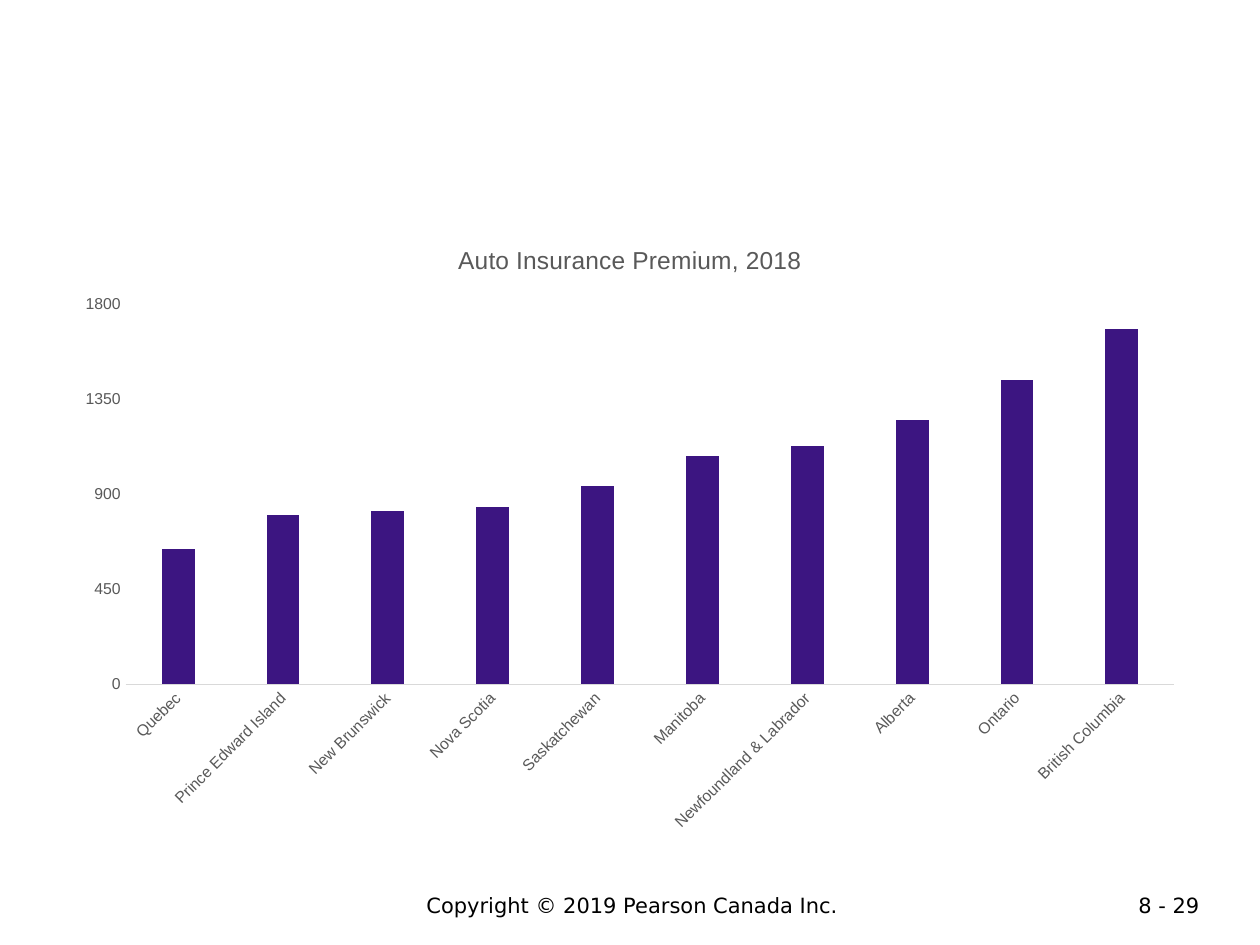
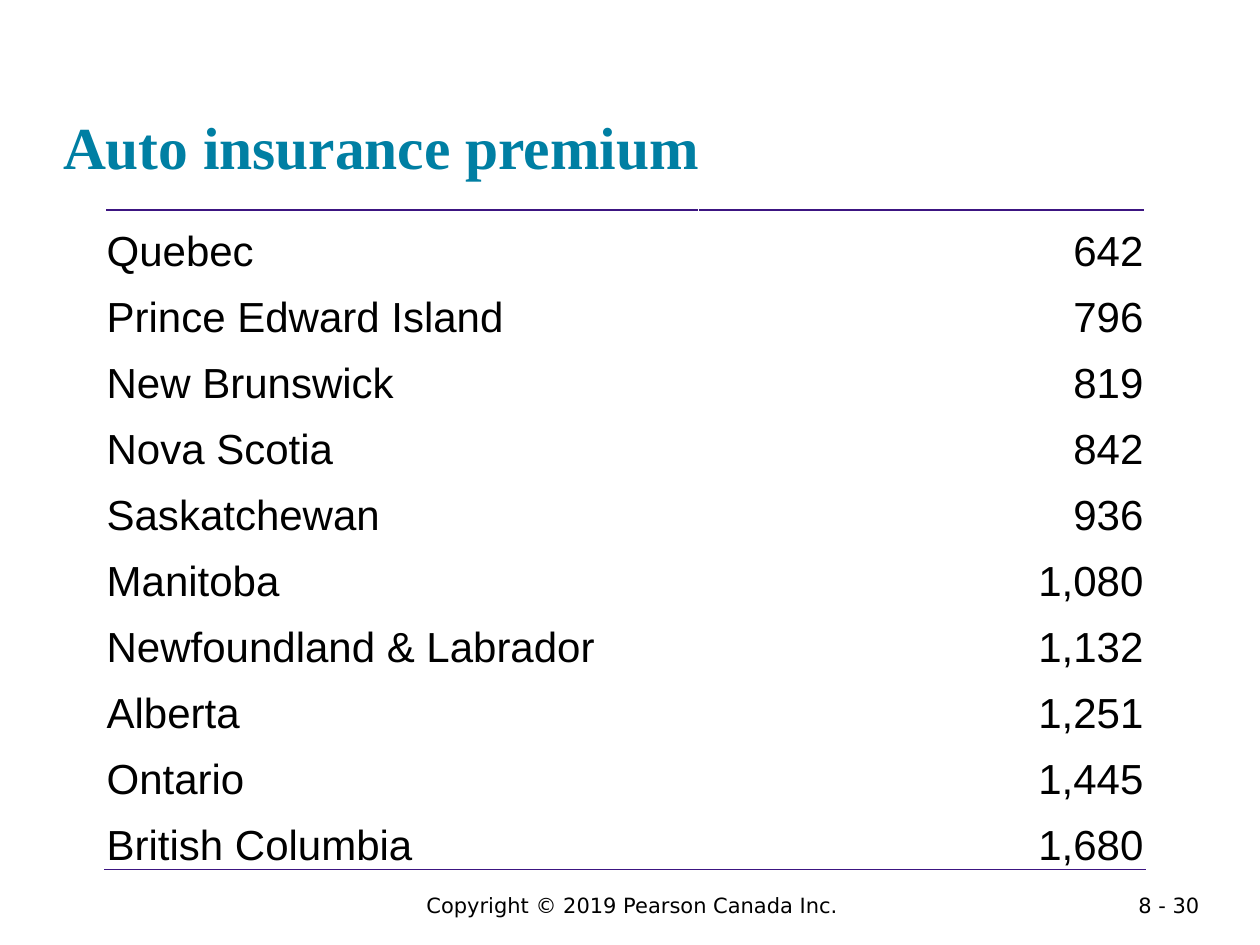
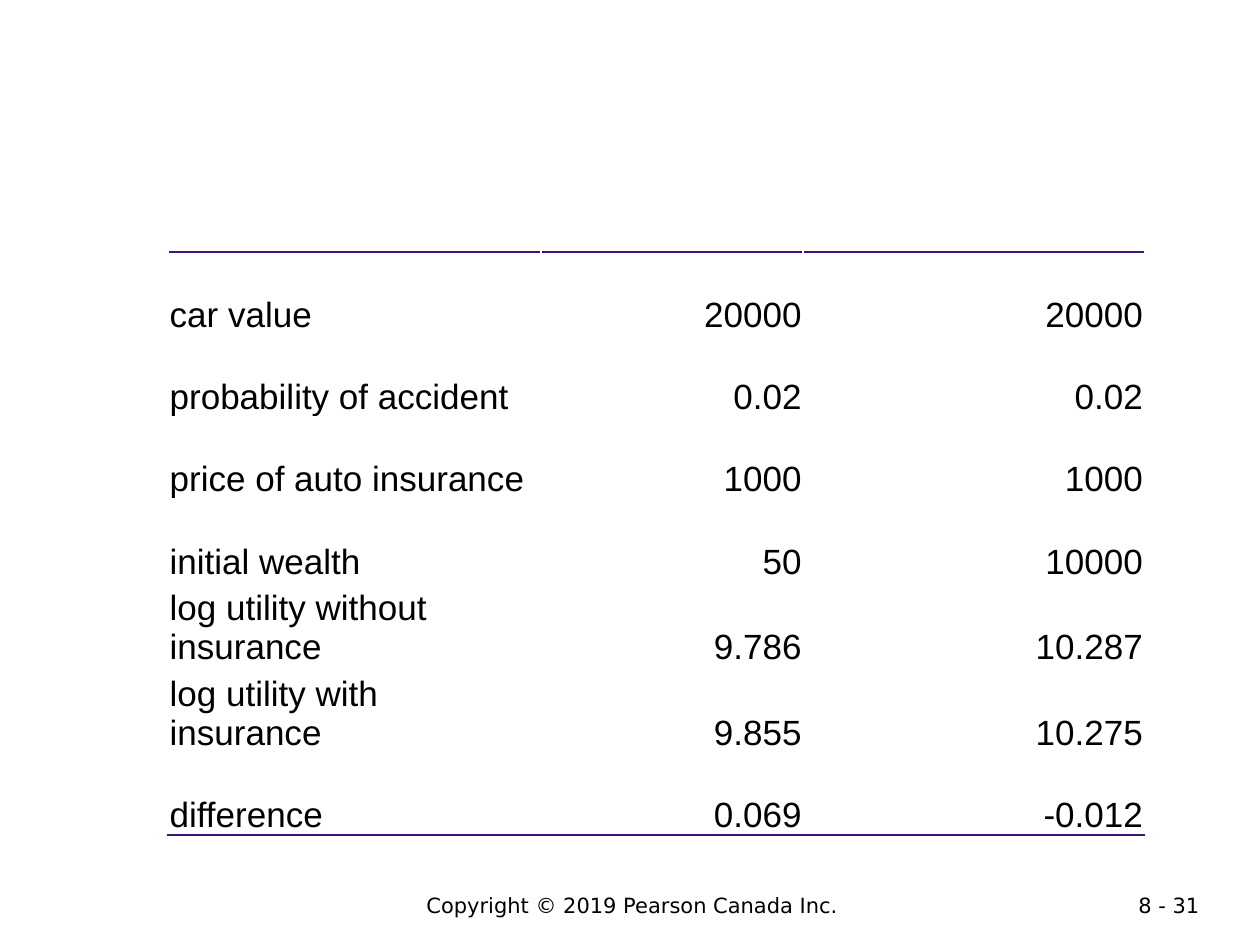
from lxml.etree import SubElement
from pptx import Presentation
from pptx.chart.data import CategoryChartData
from pptx.dml.color import RGBColor
from pptx.enum.chart import XL_CHART_TYPE, XL_TICK_MARK
from pptx.enum.text import MSO_ANCHOR, MSO_AUTO_SIZE, PP_ALIGN
from pptx.oxml import parse_xml
from pptx.oxml.ns import nsdecls, qn
from pptx.util import Cm, Pt

TITLE_ONLY, BLANK = 5, 6
CHAPTER, FIRST_PAGE = 8, 29
COPYRIGHT = "Copyright © 2019 Pearson Canada Inc."

PREMIUMS = {
    "Quebec": 642,
    "Prince Edward Island": 796,
    "New Brunswick": 819,
    "Nova Scotia": 842,
    "Saskatchewan": 936,
    "Manitoba": 1080,
    "Newfoundland & Labrador": 1132,
    "Alberta": 1251,
    "Ontario": 1445,
    "British Columbia": 1680,
}

UTILITY_ROWS = [
    ("car value", "20000", "20000"),
    ("probability of accident", "0.02", "0.02"),
    ("price of auto insurance", "1000", "1000"),
    ("initial wealth", "50", "10000"),
    ("log utility without insurance", "9.786", "10.287"),
    ("log utility with insurance", "9.855", "10.275"),
    ("difference", "0.069", "-0.012"),
]


def color(hex_code):
    return RGBColor.from_string(hex_code)


def style_font(font, name, size, hex_code, bold=False):
    font.name, font.size, font.bold = name, Pt(size), bold
    font.color.rgb = color(hex_code)


class Deck:
    """Style of the presentation, and the slide being filled."""

    BODY, HEADING, FOOTER = "Arial", "Times New Roman", "DejaVu Sans"
    BLACK, GREY, PALE, PURPLE, TEAL = "000000", "595959", "D9D9D9", "3C1581", "007FA3"

    def __init__(self):
        self.prs = Presentation()
        self.prs.slide_width, self.prs.slide_height = Cm(25.4), Cm(19.05)
        self.slide = None

    def new_slide(self, layout):
        self.slide = self.prs.slides.add_slide(self.prs.slide_layouts[layout])
        page = FIRST_PAGE + len(self.prs.slides) - 1
        self.footer(COPYRIGHT, 4.17, 17.15, 0.76, PP_ALIGN.CENTER)
        self.footer(f"{CHAPTER} - {page}", 21.89, 2.54, 0.56, PP_ALIGN.RIGHT)

    def add_text(self, paragraph, text, font, size, hex_code, align=PP_ALIGN.LEFT, bold=False):
        paragraph.alignment = align
        run = paragraph.add_run()
        run.text = text
        style_font(run.font, font, size, hex_code, bold)

    def footer(self, text, left, width, height, align):
        box = self.slide.shapes.add_textbox(Cm(left), Cm(17.86), Cm(width), Cm(height))
        box.text_frame.word_wrap = True
        self.add_text(box.text_frame.paragraphs[0], text, self.FOOTER, 12, self.BLACK, align)

    def title(self, text):
        heading = self.slide.shapes.title
        heading.left, heading.top = Cm(1.27), Cm(0.61)
        heading.width, heading.height = Cm(22.86), Cm(3.05)
        frame = heading.text_frame
        frame.auto_size = MSO_AUTO_SIZE.NONE
        frame.vertical_anchor = MSO_ANCHOR.BOTTOM
        frame.margin_left = frame.margin_right = frame.margin_top = frame.margin_bottom = 0
        self.add_text(frame.paragraphs[0], text, self.HEADING, 34, self.TEAL, bold=True)

    def column_chart(self, title, values, left, top, width, height):
        data = CategoryChartData(number_format="0")
        data.categories = list(values)
        data.add_series("Series 1", list(values.values()))
        chart = self.slide.shapes.add_chart(
            XL_CHART_TYPE.COLUMN_CLUSTERED, Cm(left), Cm(top), Cm(width), Cm(height), data
        ).chart
        style_font(chart.font, self.BODY, 10, self.BLACK)
        chart.has_legend = False
        chart.has_title = True
        self.add_text(chart.chart_title.text_frame.paragraphs[0], title,
                      self.BODY, 14, self.GREY, PP_ALIGN.CENTER)
        chart.chart_title.include_in_layout = False

        plot = chart.plots[0]
        plot.vary_by_categories = False
        plot.gap_width, plot.overlap = 219, -27
        bars = plot.series[0].format.fill
        bars.solid()
        bars.fore_color.rgb = color(self.PURPLE)

        provinces, amounts = chart.category_axis, chart.value_axis
        for axis in (provinces, amounts):
            axis.has_major_gridlines = False
            axis.major_tick_mark = axis.minor_tick_mark = XL_TICK_MARK.NONE
            style_font(axis.tick_labels.font, self.BODY, 9, self.GREY)
        provinces.format.line.color.rgb = color(self.PALE)
        provinces.format.line.width = Pt(0.75)
        label_body = provinces._element.find(qn("c:txPr")).find(qn("a:bodyPr"))
        label_body.set("rot", "-2700000")
        amounts.format.line.fill.background()
        amounts.minimum_scale, amounts.maximum_scale, amounts.major_unit = 0, 1800, 450

    def table(self, rows, left, top, widths, row_height, size):
        """Open table ruled only above the first row and below the last."""
        grid = self.slide.shapes.add_table(
            len(rows), len(widths), Cm(left), Cm(top),
            Cm(sum(widths)), Cm(row_height * len(rows))
        ).table
        grid.first_row = grid.horz_banding = False
        for column, width in zip(grid.columns, widths):
            column.width = Cm(width)
        for r, row in enumerate(rows):
            grid.rows[r].height = Cm(row_height)
            for c, text in enumerate(row):
                cell = grid.cell(r, c)
                cell.fill.background()
                cell.vertical_anchor = MSO_ANCHOR.BOTTOM
                cell.margin_left = cell.margin_right = cell.margin_top = Cm(0.03)
                cell.margin_bottom = 0
                align = PP_ALIGN.RIGHT if c else PP_ALIGN.LEFT
                self.add_text(cell.text_frame.paragraphs[0], text, self.BODY, size, self.BLACK, align)
                if r == 0:
                    self.rule(cell, "lnT")
                elif r == len(rows) - 1:
                    self.rule(cell, "lnB")

    def rule(self, cell, side):
        border = parse_xml(f'<a:{side} {nsdecls("a")} w="{Pt(1)}"/>')
        fill = SubElement(border, qn("a:solidFill"))
        SubElement(fill, qn("a:srgbClr"), val=self.PURPLE)
        cell._tc.get_or_add_tcPr().insert(0, border)


def main():
    deck = Deck()

    deck.new_slide(BLANK)
    rounded = {province: round(premium, -1) for province, premium in PREMIUMS.items()}
    deck.column_chart("Auto Insurance Premium, 2018", rounded, 1.27, 4.45, 22.86, 12.57)

    deck.new_slide(TITLE_ONLY)
    deck.title("Auto insurance premium")
    premium_rows = [(province, f"{premium:,}") for province, premium in PREMIUMS.items()]
    deck.table(premium_rows, 2.12, 4.23, [11.96, 9], 1.33, 24)

    deck.new_slide(BLANK)
    deck.table(UTILITY_ROWS, 3.39, 5.08, [7.52, 5.28, 6.88], 1.66, 20)

    deck.prs.save("out.pptx")


if __name__ == "__main__":
    main()
